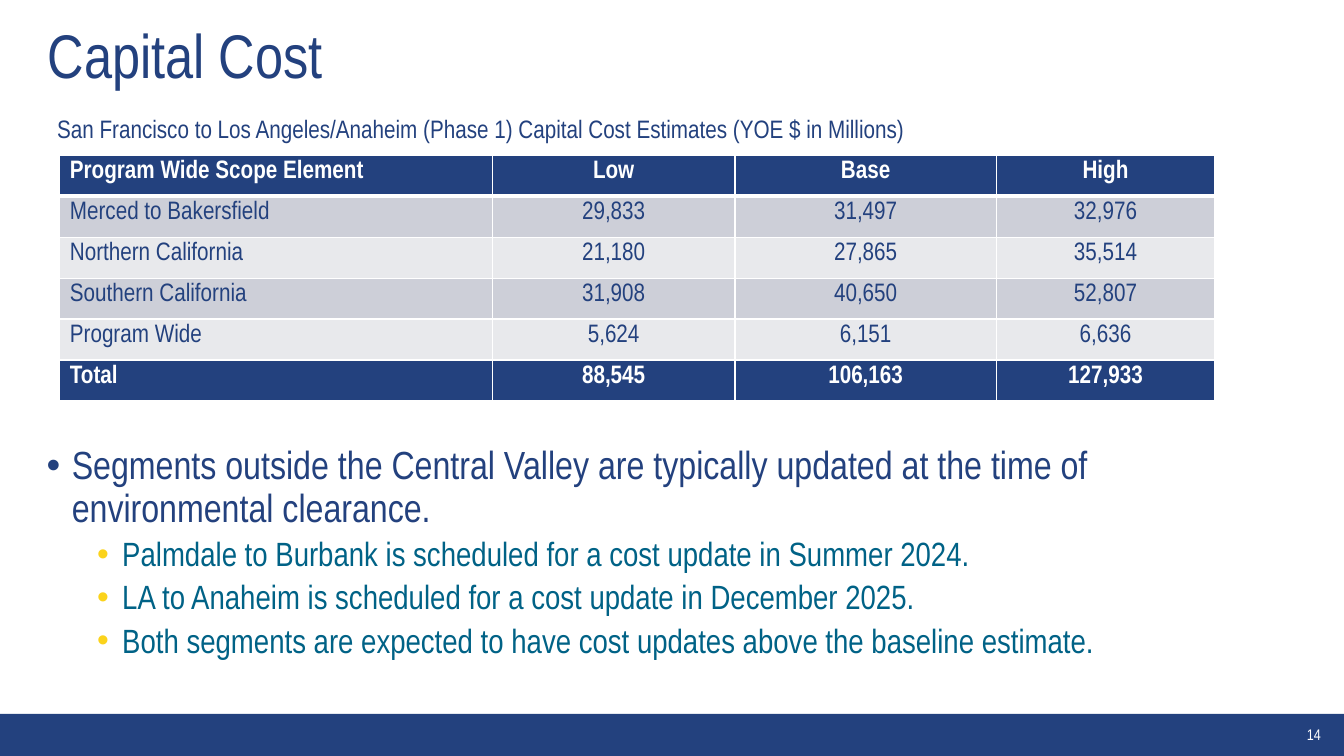
from dataclasses import dataclass

from lxml import etree
from pptx import Presentation
from pptx.dml.color import RGBColor
from pptx.enum.shapes import MSO_SHAPE
from pptx.enum.text import MSO_ANCHOR, PP_ALIGN
from pptx.oxml.ns import qn
from pptx.util import Pt

PX = 9525
RECT = MSO_SHAPE.RECTANGLE
TOP, MIDDLE = MSO_ANCHOR.TOP, MSO_ANCHOR.MIDDLE
LEFT, CENTER = PP_ALIGN.LEFT, PP_ALIGN.CENTER


@dataclass(frozen=True)
class Theme:
    """Hold the colours, font and type sizes."""
    face: str = "Arial Narrow"
    navy: str = "23417E"
    teal: str = "006286"
    gold: str = "FBD31B"
    white: str = "FFFFFF"
    bands: tuple = ("CDCFD8", "E8E9EC")
    title: int = 44
    lead: int = 28
    point: int = 24
    small: int = 18
    page: int = 11


THEME = Theme()
WIDTHS = (412, 231, 249, 208)
ROW = 39
COSTS = (
    ("Program Wide Scope Element", "Low", "Base", "High"),
    ("Merced to Bakersfield", "29,833", "31,497", "32,976"),
    ("Northern California", "21,180", "27,865", "35,514"),
    ("Southern California", "31,908", "40,650", "52,807"),
    ("Program Wide", "5,624", "6,151", "6,636"),
    ("Total", "88,545", "106,163", "127,933"),
)
LEAD = "Segments outside the Central Valley are typically updated at the time of\venvironmental clearance."
POINTS = (
    "Palmdale to Burbank is scheduled for a cost update in Summer 2024.",
    "LA to Anaheim is scheduled for a cost update in December 2025.",
    "Both segments are expected to have cost updates above the baseline estimate.",
)


def scale(box):
    """Turn px lengths into EMU."""
    return [n * PX for n in box]


def style(para, size, color, bold=False):
    """Format each run of a paragraph."""
    for run in para.runs:
        font = run.font
        font.name, font.size, font.bold = THEME.face, Pt(size), bold
        font.color.rgb = RGBColor.from_string(color)


def add_text(slide, box, text, size, color, space=1.0, align=LEFT, anchor=TOP):
    """Place a wrapped text box and return its frame."""
    frame = slide.shapes.add_textbox(*scale(box)).text_frame
    frame.word_wrap = True
    frame.vertical_anchor = anchor
    frame.text = text
    para = frame.paragraphs[0]
    para.alignment, para.line_spacing = align, space
    style(para, size, color)
    return frame


def add_bullet(para, left, color):
    """Give a paragraph a hanging round bullet."""
    props = para._p.get_or_add_pPr()
    props.set("marL", str(left * PX))
    props.set("indent", str(-24 * PX))
    tint = etree.SubElement(props, qn("a:buClr"))
    etree.SubElement(tint, qn("a:srgbClr"), val=color)
    etree.SubElement(props, qn("a:buFont"), typeface="Arial")
    etree.SubElement(props, qn("a:buChar"), char="•")


def add_edges(cell, widths):
    """Draw the white borders of a cell, widths in points."""
    props = cell._tc.get_or_add_tcPr()
    for side, width in zip("LRTB", widths):
        line = etree.SubElement(props, qn(f"a:ln{side}"), w=str(Pt(width)))
        fill = etree.SubElement(line, qn("a:solidFill"))
        etree.SubElement(fill, qn("a:srgbClr"), val=THEME.white)


def add_costs(slide, box):
    """Fill the cost table from the top left of its box."""
    left, top = box
    size = (sum(WIDTHS), ROW * len(COSTS))
    table = slide.shapes.add_table(
        len(COSTS), len(WIDTHS), *scale((left, top, *size))).table
    table.horz_banding = False
    for col, width in zip(table.columns, WIDTHS):
        col.width = width * PX
    for r, row in enumerate(COSTS):
        table.rows[r].height = ROW * PX
        strong = r in (0, len(COSTS) - 1)
        back = THEME.navy if strong else THEME.bands[(r - 1) % 2]
        color = THEME.white if strong else THEME.navy
        edges = (1, 1, 3 if r == 1 else 1, 3 if r == 0 else 1)
        for c, text in enumerate(row):
            cell = table.cell(r, c)
            add_edges(cell, edges)
            cell.fill.solid()
            cell.fill.fore_color.rgb = RGBColor.from_string(back)
            cell.text_frame.text = text
            para = cell.text_frame.paragraphs[0]
            para.alignment = CENTER if c else LEFT
            style(para, THEME.small, color, strong)


def add_notes(slide, box):
    """Write the lead bullet and its points."""
    frame = add_text(slide, box, LEAD, THEME.lead, THEME.navy, 0.9)
    add_bullet(frame.paragraphs[0], 24, THEME.navy)
    for text in POINTS:
        para = frame.add_paragraph()
        para.text = text
        para.level = 1
        para.line_spacing, para.space_before = 0.9, Pt(5)
        add_bullet(para, 72, THEME.gold)
        style(para, THEME.point, THEME.teal)


def add_footer(slide, box):
    """Draw the bottom bar with the page number."""
    left, top, width, _ = box
    bar = slide.shapes.add_shape(RECT, *scale(box))
    bar.shadow.inherit = False
    bar.fill.solid()
    bar.fill.fore_color.rgb = RGBColor.from_string(THEME.navy)
    bar.line.fill.background()
    add_text(slide, (left + width - 55, top + 10, 53, 19), "14",
             THEME.page, THEME.white, align=CENTER, anchor=MIDDLE)


def main():
    """Build the slide and save it."""
    deck = Presentation()
    deck.slide_width, deck.slide_height = scale((1280, 720))
    slide = deck.slides.add_slide(deck.slide_layouts[6])
    add_footer(slide, (0, 680, 1280, 40))
    add_text(slide, (36, 13, 1204, 85), "Capital Cost",
             THEME.title, THEME.navy, 0.9, anchor=MIDDLE)
    add_text(slide, (45, 109, 1235, 35),
             "San Francisco to Los Angeles/Anaheim (Phase 1) Capital Cost Estimates (YOE $ in Millions)",
             THEME.small, THEME.navy, 0.8)
    add_costs(slide, (57, 148))
    add_notes(slide, (35, 420, 1235, 233))
    deck.save("out.pptx")


if __name__ == "__main__":
    main()
